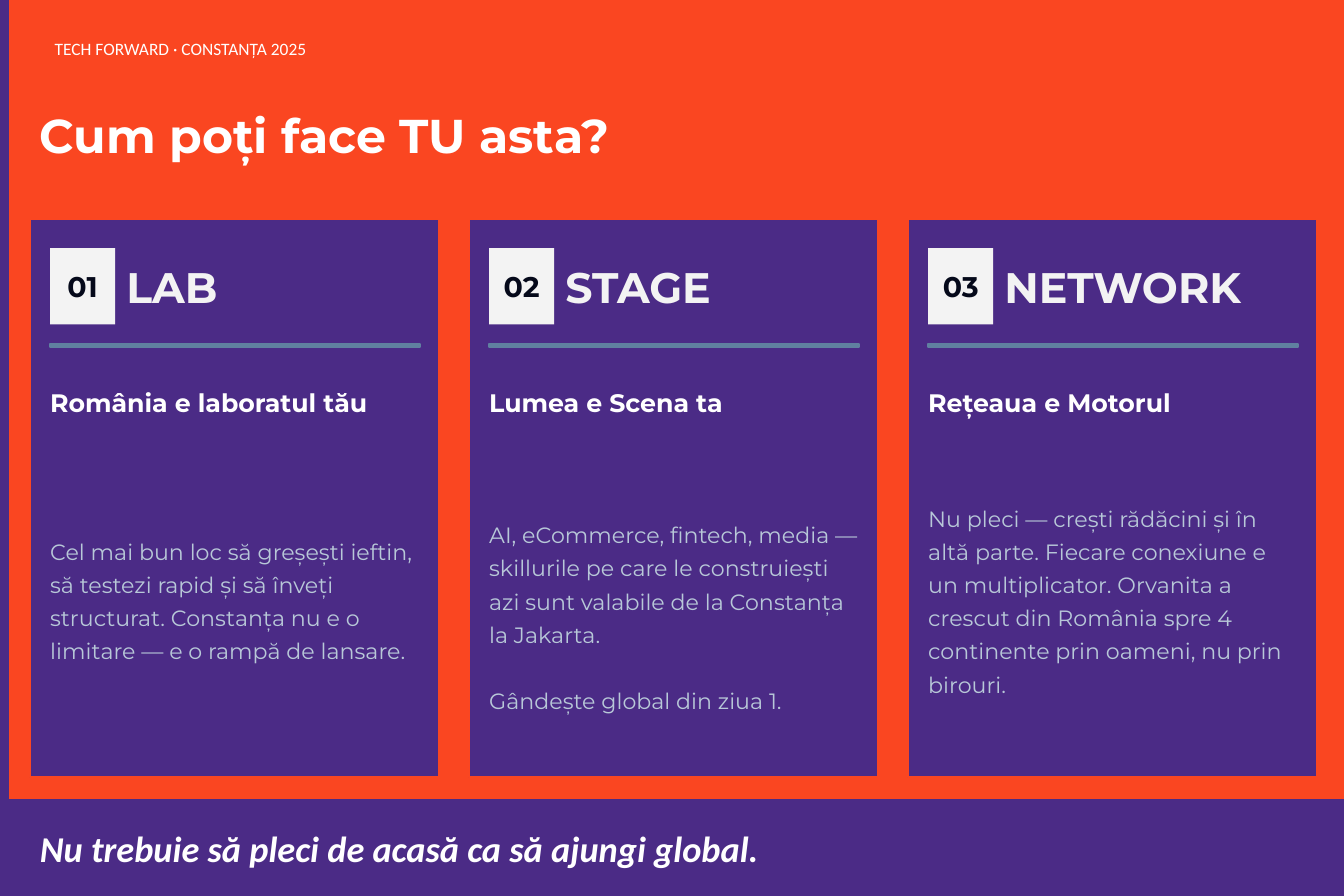
from pptx import Presentation
from pptx.dml.color import RGBColor
from pptx.enum.shapes import MSO_SHAPE
from pptx.enum.text import MSO_ANCHOR, MSO_AUTO_SIZE, PP_ALIGN
from pptx.util import Cm, Pt

RECTANGLE = MSO_SHAPE.RECTANGLE
MIDDLE = MSO_ANCHOR.MIDDLE
NO_FIT = MSO_AUTO_SIZE.NONE
LEFT, CENTER = PP_ALIGN.LEFT, PP_ALIGN.CENTER

COLORS = {
    "orange": "FA4621",
    "purple": "4B2B86",
    "white": "FFFFFF",
    "light": "F3F3F3",
    "ink": "05091A",
    "steel": "6080A0",
    "mist": "B8C8D8",
}
HEADING_FONT, PLAIN_FONT = "Montserrat", "Calibri"
TITLE_ONLY = 5
CARD_LEFT, CARD_PITCH, CARD_PADDING = 0.66, 9.8, 0.46
INNER_WIDTH = 8.26
BODY_LINE_PT = 21

CARDS = [
    ("01", "LAB", "România e laboratul tău", [
        "Cel mai bun loc să greșești ieftin, să testezi rapid și să înveți "
        "structurat. Constanța nu e o limitare — e o rampă de lansare."], 0),
    ("02", "STAGE", "Lumea e Scena ta", [
        "AI, eCommerce, fintech, media — skillurile pe care le construiești "
        "azi sunt valabile de la Constanța la Jakarta.",
        "Gândește global din ziua 1."], 0.74),
    ("03", "NETWORK", "Rețeaua e Motorul", [
        "Nu pleci — crești rădăcini și în altă parte. Fiecare conexiune e un "
        "multiplicator. Orvanita a crescut din România spre 4 continente prin "
        "oameni, nu prin birouri."], 0),
]


def rgb(name):
    """Return the named palette colour."""
    return RGBColor.from_string(COLORS[name])


def set_frame(frame, side=0, top=0, bottom=0):
    """Wrap and vertically centre a text frame, with margins in cm."""
    frame.word_wrap = True
    frame.auto_size = NO_FIT
    frame.vertical_anchor = MIDDLE
    frame.margin_left = frame.margin_right = Cm(side)
    frame.margin_top, frame.margin_bottom = Cm(top), Cm(bottom)


def add_span(para, text, size, color, font=HEADING_FONT, bold=True,
             italic=False, align=LEFT):
    """Add one formatted run to a paragraph."""
    para.alignment = align
    span = para.add_run()
    span.text = text
    span.font.size = Pt(size)
    span.font.name = font
    span.font.bold = bold
    span.font.italic = italic
    span.font.color.rgb = rgb(color)


def add_block(page, bounds, fill, line=None):
    """Add a flat rectangle, outlined if a line colour is given."""
    block = page.shapes.add_shape(RECTANGLE, *map(Cm, bounds))
    block.shadow.inherit = False
    block.fill.solid()
    block.fill.fore_color.rgb = rgb(fill)
    if line:
        block.line.color.rgb = rgb(line)
        block.line.width = Pt(1.25)
    else:
        block.line.fill.background()
    return block


def add_label(page, bounds, text, size, color, **style):
    """Add a single-line text box and return its frame."""
    frame = page.shapes.add_textbox(*map(Cm, bounds)).text_frame
    set_frame(frame)
    add_span(frame.paragraphs[0], text, size, color, **style)
    return frame


def add_body(page, bounds, texts, top_margin):
    """Add the card's body paragraphs, one line apart."""
    frame = page.shapes.add_textbox(*map(Cm, bounds)).text_frame
    set_frame(frame, top=top_margin)
    for index, text in enumerate(texts):
        para = frame.add_paragraph() if index else frame.paragraphs[0]
        para.line_spacing = 1.25
        para.space_before = Pt(BODY_LINE_PT if index else 0)
        add_span(para, text, 14, "mist", bold=False)


def add_card(page, left, number, name, subtitle, texts, top_margin):
    """Add one numbered card."""
    inner = left + CARD_PADDING
    add_block(page, (left, 4.9, 9.14, 12.45), "purple", "orange")
    badge = add_block(page, (inner, 5.54, 1.45, 1.7), "light").text_frame
    set_frame(badge)
    add_span(badge.paragraphs[0], number, 18, "ink", align=CENTER)
    add_label(page, (inner + 1.7, 5.61, 6.3, 1.57), name, 27, "light")
    add_block(page, (inner, 7.67, INNER_WIDTH, 0.08), "steel", "steel")
    add_label(page, (inner, 8.1, INNER_WIDTH, 1.78), subtitle, 16, "white")
    add_body(page, (inner, 10.06, INNER_WIDTH, 6.58), texts, top_margin)


def format_title(page, text):
    """Place and format the slide title."""
    title = page.shapes.title
    title.left, title.top = Cm(0.89), Cm(1.85)
    title.width, title.height = Cm(27), Cm(2.31)
    set_frame(title.text_frame)
    add_span(title.text_frame.paragraphs[0], text, 30, "white")


def main():
    """Build the slide and save the deck."""
    deck = Presentation()
    deck.slide_width, deck.slide_height = Cm(30), Cm(20)
    page = deck.slides.add_slide(deck.slide_layouts[TITLE_ONLY])
    page.background.fill.solid()
    page.background.fill.fore_color.rgb = rgb("orange")

    add_block(page, (0, 0, 0.18, 20), "purple", "purple")
    format_title(page, "Cum poți face TU asta?")
    for index, card in enumerate(CARDS):
        add_card(page, CARD_LEFT + index * CARD_PITCH, *card)
    add_block(page, (0, 17.86, 30, 2.14), "purple", "purple")
    add_label(page, (0.89, 18.03, 22.5, 1.78),
              "Nu trebuie să pleci de acasă ca să ajungi global.",
              23, "white", font=PLAIN_FONT, italic=True)
    kicker = add_label(page, (0.89, 0.64, 28.2, 0.89),
                       "TECH FORWARD · CONSTANȚA 2025",
                       11, "white", font=PLAIN_FONT, bold=False)
    set_frame(kicker, side=0.33, top=0.15, bottom=0.15)
    deck.save("out.pptx")


if __name__ == "__main__":
    main()
